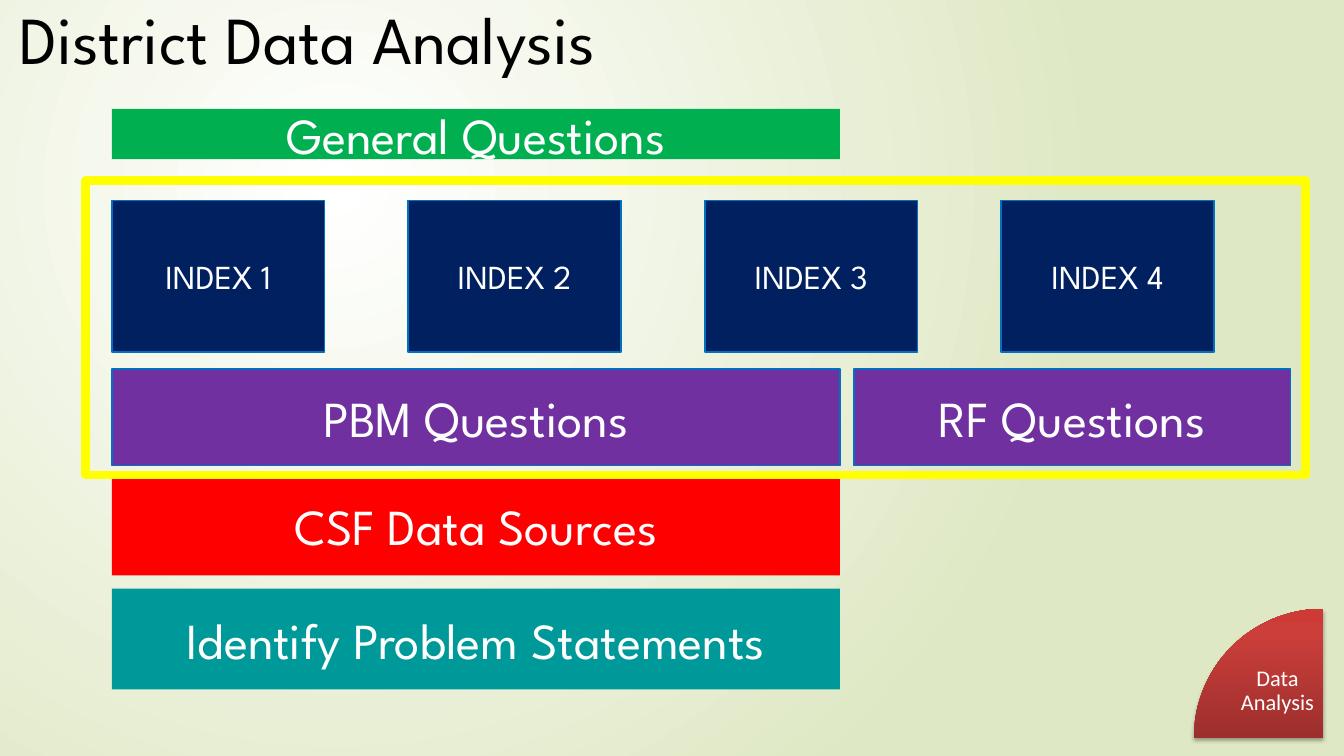
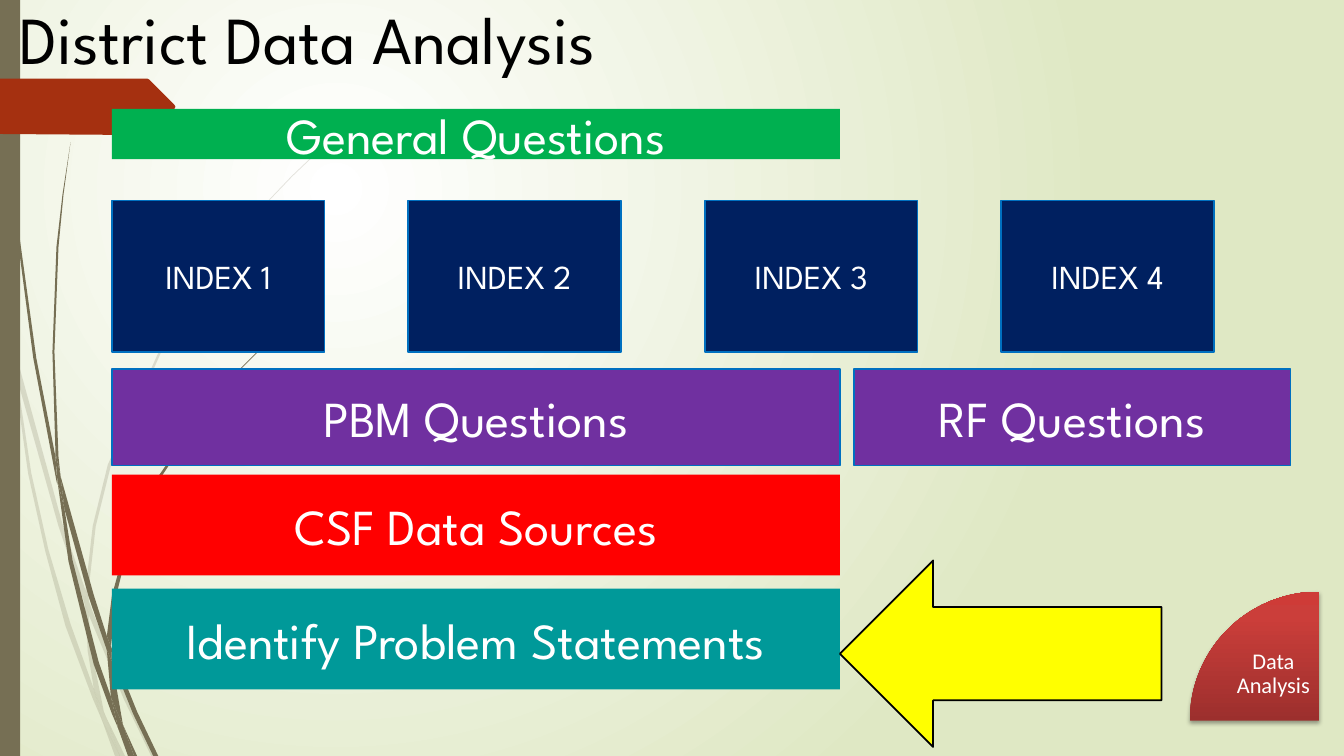
from lxml import etree
from pptx import Presentation
from pptx.dml.color import RGBColor
from pptx.enum.shapes import MSO_SHAPE
from pptx.enum.text import MSO_ANCHOR, MSO_AUTO_SIZE, PP_ALIGN
from pptx.oxml import parse_xml
from pptx.oxml.ns import nsdecls, qn
from pptx.util import Inches, Pt

RECTANGLE = MSO_SHAPE.RECTANGLE
LEFT_ARROW = MSO_SHAPE.LEFT_ARROW
PIE_WEDGE = MSO_SHAPE.PIE_WEDGE
LEFT, CENTER = PP_ALIGN.LEFT, PP_ALIGN.CENTER
TOP, MIDDLE = MSO_ANCHOR.TOP, MSO_ANCHOR.MIDDLE
NO_AUTOFIT = MSO_AUTO_SIZE.NONE

# Colours and fonts
BLACK = RGBColor(0x00, 0x00, 0x00)
WHITE = RGBColor(0xFF, 0xFF, 0xFF)
PALE_GREEN = RGBColor(0xDF, 0xE8, 0xC4)
GREEN = RGBColor(0x00, 0xB0, 0x50)
NAVY = RGBColor(0x00, 0x20, 0x60)
BLUE = RGBColor(0x00, 0x70, 0xC0)
PURPLE = RGBColor(0x70, 0x30, 0xA0)
RED = RGBColor(0xFF, 0x00, 0x00)
TEAL = RGBColor(0x00, 0x99, 0x99)
YELLOW = RGBColor(0xFF, 0xFF, 0x00)
OLIVE = RGBColor(0x76, 0x6F, 0x54)
RUST = RGBColor(0xA5, 0x30, 0x10)
WEDGE_STOPS = [
    (0, RGBColor(0x9C, 0x2F, 0x2D)),
    (80, RGBColor(0xCB, 0x3E, 0x3A)),
    (100, RGBColor(0xCE, 0x3B, 0x37)),
]
MAIN_FONT = "League Spartan"
WEDGE_FONT = "Calibri"

# Rows and columns of the diagram, in inches
LEFT_EDGE = 1.11
BAR_WIDTH = 7.22
INDEX_PITCH = 2.94
BARS = [  # text, left, top, width, height, fill, outline
    ("CSF Data Sources", LEFT_EDGE, 4.71, BAR_WIDTH, 1, RED, None),
    ("General Questions", LEFT_EDGE, 1.08, BAR_WIDTH, 0.5, GREEN, None),
    ("Identify Problem Statements", LEFT_EDGE, 5.84, BAR_WIDTH, 1, TEAL, None),
    ("PBM Questions", LEFT_EDGE, 3.66, BAR_WIDTH, 0.96, PURPLE, BLUE),
    ("RF Questions", 8.47, 3.66, 4.33, 0.96, PURPLE, BLUE),
]

# Outlines of the side decoration, in inches
PALE_WISPS = [
    [(0.11, 3.5), (0.09, 3.22), (0, 2.82), (0, 2.99), (0.1, 3.44)],
    [(0.58, 5.22), (0.84, 5.99), (0.85, 5.86), (0.62, 5.2), (0.14, 3.45), (0.17, 3.76)],
    [(0.92, 6.07), (0.88, 5.96), (0.88, 6.1), (1.23, 6.94), (1.5, 7.5), (1.55, 7.5),
     (1.27, 6.92)],
    [(1.19, 7.5), (1.24, 7.5), (1.05, 7.11)],
    [(0.93, 6.83), (0.7, 6.19), (0.48, 5.45), (0.31, 4.69), (0.17, 3.76), (0.11, 3.5),
     (0.28, 4.7), (0.45, 5.47), (0.65, 6.21), (0.92, 6.93), (1.01, 7.14), (0.99, 7.07)],
    [(0.84, 5.99), (0.87, 6.46), (0.93, 6.83), (0.96, 6.92), (1.05, 7.11), (1.03, 7.06),
     (0.91, 6.46), (0.88, 6.1), (0.88, 6.08)],
    [(0.88, 5.84), (0.95, 5.22), (1.1, 4.62), (1.6, 3.49), (2.29, 2.45), (2.68, 1.98),
     (2.9, 1.75), (3.12, 1.54), (3.12, 1.53), (2.89, 1.75), (2.68, 1.97), (2.28, 2.44),
     (1.58, 3.48), (1.07, 4.61), (0.92, 5.22), (0.85, 5.84), (0.85, 5.86), (0.88, 5.96)],
    [(1.01, 7.14), (1.14, 7.5), (1.19, 7.5)],
    [(0.88, 6.08), (0.88, 5.96), (0.85, 5.86), (0.84, 5.99)],
    [(0.96, 6.92), (0.93, 6.83), (0.99, 7.07), (1.01, 7.14), (1.19, 7.5), (1.05, 7.11)],
]
DARK_WISPS = [
    [(0.07, 1.1), (0.17, 2.33), (0.33, 3.55), (0.56, 4.77), (0.57, 4.81), (0.55, 4.53),
     (0.36, 3.55), (0.19, 2.32), (0.08, 1.09), (0.05, 0.48), (0.04, 0), (0.03, 0),
     (0.04, 0.48)],
    [(0.88, 5.92), (1.06, 6.45), (1.06, 6.31), (0.93, 5.9), (0.6, 4.72), (0.64, 5.05)],
    [(1.13, 6.49), (1.1, 6.41), (1.11, 6.56), (1.32, 7.08), (1.52, 7.5), (1.57, 7.5),
     (1.36, 7.06)],
    [(1.1, 6.91), (0.98, 6.57), (0.72, 5.56), (0.64, 5.05), (0.57, 4.77), (0.68, 5.57),
     (0.93, 6.59), (1.11, 7.08), (1.17, 7.22), (1.16, 7.17)],
    [(0.6, 4.72), (0.58, 4.53), (0.54, 3.49), (0.58, 2.45), (0.63, 1.93), (0.7, 1.41),
     (0.62, 1.93), (0.56, 2.45), (0.52, 3.49), (0.55, 4.49)],
    [(1.33, 7.5), (1.36, 7.5), (1.22, 7.19)],
    [(0.57, 4.77), (0.64, 5.05), (0.6, 4.72), (0.55, 4.49), (0.55, 4.53)],
    [(1.11, 6.33), (1.15, 5.92), (1.25, 5.52), (1.58, 4.76), (2.05, 4.06), (2.31, 3.74),
     (2.61, 3.44), (2.6, 3.44), (2.31, 3.73), (2.04, 4.05), (1.56, 4.74), (1.22, 5.51),
     (1.11, 5.91), (1.06, 6.31), (1.1, 6.41)],
    [(1.17, 7.22), (1.27, 7.5), (1.31, 7.5)],
    [(1.06, 6.45), (1.1, 6.91), (1.16, 7.06), (1.22, 7.19), (1.11, 6.56)],
    [(1.06, 6.45), (1.11, 6.56), (1.1, 6.41), (1.06, 6.31)],
    [(1.16, 7.06), (1.1, 6.91), (1.16, 7.17), (1.17, 7.22), (1.3, 7.5), (1.33, 7.5),
     (1.22, 7.19)],
]
TITLE_TAG = [(0, 0.78), (1.46, 0.78), (1.48, 0.79), (1.73, 1.04), (1.74, 1.06),
             (1.73, 1.08), (1.48, 1.33), (1.46, 1.34), (1.36, 1.34), (0, 1.33)]


def set_gradient(element, stops, shade):
    """Replace the stops and shading of the first gradient in the element."""
    gradient = next(element.iter(qn("a:gradFill")))
    for child in list(gradient):
        gradient.remove(child)
    stop_list = etree.SubElement(gradient, qn("a:gsLst"))
    for position, color in stops:
        stop = etree.SubElement(stop_list, qn("a:gs"), pos=str(position * 1000))
        etree.SubElement(stop, qn("a:srgbClr"), val=str(color))
    gradient.append(parse_xml(shade))


def set_background(master):
    master.background.fill.gradient()
    set_gradient(
        master.element,
        [(0, WHITE), (100, PALE_GREEN)],
        f'<a:path {nsdecls("a")} path="circle">'
        '<a:fillToRect l="50000" t="50000" r="100000" b="100000"/></a:path>',
    )


def style_shape(shape, fill=None, outline=None, outline_width=1.25):
    shape.shadow.inherit = False
    if fill is None:
        shape.fill.background()
    else:
        shape.fill.solid()
        shape.fill.fore_color.rgb = fill
    if outline is None:
        shape.line.fill.background()
    else:
        shape.line.color.rgb = outline
        shape.line.width = Pt(outline_width)


def set_text(shape, text, size, color=WHITE, font=MAIN_FONT, align=CENTER, anchor=MIDDLE):
    frame = shape.text_frame
    frame.text = text
    frame.word_wrap = True
    frame.auto_size = NO_AUTOFIT
    frame.vertical_anchor = anchor
    paragraph = frame.paragraphs[0]
    paragraph.alignment = align
    paragraph.font.name = font
    paragraph.font.size = Pt(size)
    paragraph.font.color.rgb = color


def add_preset(shapes, preset, left, top, width, height, fill=None, outline=None,
               outline_width=1.25):
    shape = shapes.add_shape(preset, Inches(left), Inches(top), Inches(width), Inches(height))
    style_shape(shape, fill, outline, outline_width)
    return shape


def add_outline(shapes, points, fill, opacity=100):
    (start_x, start_y), *others = [(Inches(x), Inches(y)) for x, y in points]
    builder = shapes.build_freeform(start_x, start_y)
    builder.add_line_segments(others, close=True)
    shape = builder.convert_to_shape()
    style_shape(shape, fill)
    if opacity < 100:
        color = next(shape.element.spPr.iter(qn("a:srgbClr")))
        etree.SubElement(color, qn("a:alpha"), val=str(opacity * 1000))


def add_side_decoration(slide):
    for wisps, opacity in ((PALE_WISPS, 20), (DARK_WISPS, 100)):
        group = slide.shapes.add_group_shape()
        for points in wisps:
            add_outline(group.shapes, points, OLIVE, opacity)
    add_preset(slide.shapes, RECTANGLE, 0, 0, 0.2, 7.5, OLIVE)
    add_outline(slide.shapes, TITLE_TAG, RUST)


def add_title(slide, text):
    title = slide.shapes.title
    title.left, title.top = Inches(0.09), Inches(-0.08)
    title.width, title.height = Inches(6.87), Inches(0.91)
    set_text(title, text, 48, BLACK, align=LEFT, anchor=TOP)
    # Bring the title in front of the side decoration
    slide.shapes.element.append(title.element)


def add_diagram(slide):
    for number in range(4):
        box = add_preset(slide.shapes, RECTANGLE, LEFT_EDGE + number * INDEX_PITCH, 1.99,
                         2.11, 1.5, NAVY, BLUE)
        set_text(box, f"INDEX {number + 1}", 24)
    for text, left, top, width, height, fill, outline in BARS:
        bar = add_preset(slide.shapes, RECTANGLE, left, top, width, height, fill, outline)
        set_text(bar, text, 36)


def add_wedge(slide, left, top):
    group = slide.shapes.add_group_shape()
    wedge = add_preset(group.shapes, PIE_WEDGE, left, top, 1.28, 1.28)
    wedge.fill.gradient()
    properties = wedge.element.spPr
    set_gradient(properties, WEDGE_STOPS, f'<a:lin {nsdecls("a")} ang="16200000" scaled="0"/>')
    properties.find(qn("a:effectLst")).append(parse_xml(
        f'<a:outerShdw {nsdecls("a")} blurRad="{Pt(3.1)}" dist="{Pt(1.8)}" dir="5400000" '
        f'rotWithShape="0"><a:srgbClr val="{BLACK}"><a:alpha val="35000"/></a:srgbClr>'
        '</a:outerShdw>'))
    label = group.shapes.add_textbox(Inches(left + 0.38), Inches(top + 0.37),
                                     Inches(0.9), Inches(0.9))
    set_text(label, "Data Analysis", 16, font=WEDGE_FONT)
    frame = label.text_frame
    frame.margin_left = frame.margin_right = Inches(0.07)
    frame.margin_top = frame.margin_bottom = Inches(0.07)
    frame.paragraphs[0].line_spacing = 0.9


def add_analysis_slide(presentation, decorated=False):
    slide = presentation.slides.add_slide(presentation.slide_layouts[5])
    if decorated:
        add_side_decoration(slide)
    add_title(slide, "District Data Analysis")
    add_diagram(slide)
    return slide


def main():
    presentation = Presentation()
    presentation.slide_width = Inches(13.33)
    presentation.slide_height = Inches(7.5)
    set_background(presentation.slide_master)

    # Slide 1: frame around the indexes and their questions
    slide = add_analysis_slide(presentation)
    add_wedge(slide, 11.84, 6.04)
    add_preset(slide.shapes, RECTANGLE, 0.85, 1.79, 12.1, 2.92, None, YELLOW, 6)

    # Slide 2: arrow to the problem statements
    slide = add_analysis_slide(presentation, decorated=True)
    add_preset(slide.shapes, LEFT_ARROW, 8.33, 5.56, 3.19, 1.85, YELLOW, BLACK)
    add_wedge(slide, 11.8, 5.87)

    presentation.save("out.pptx")


if __name__ == "__main__":
    main()
